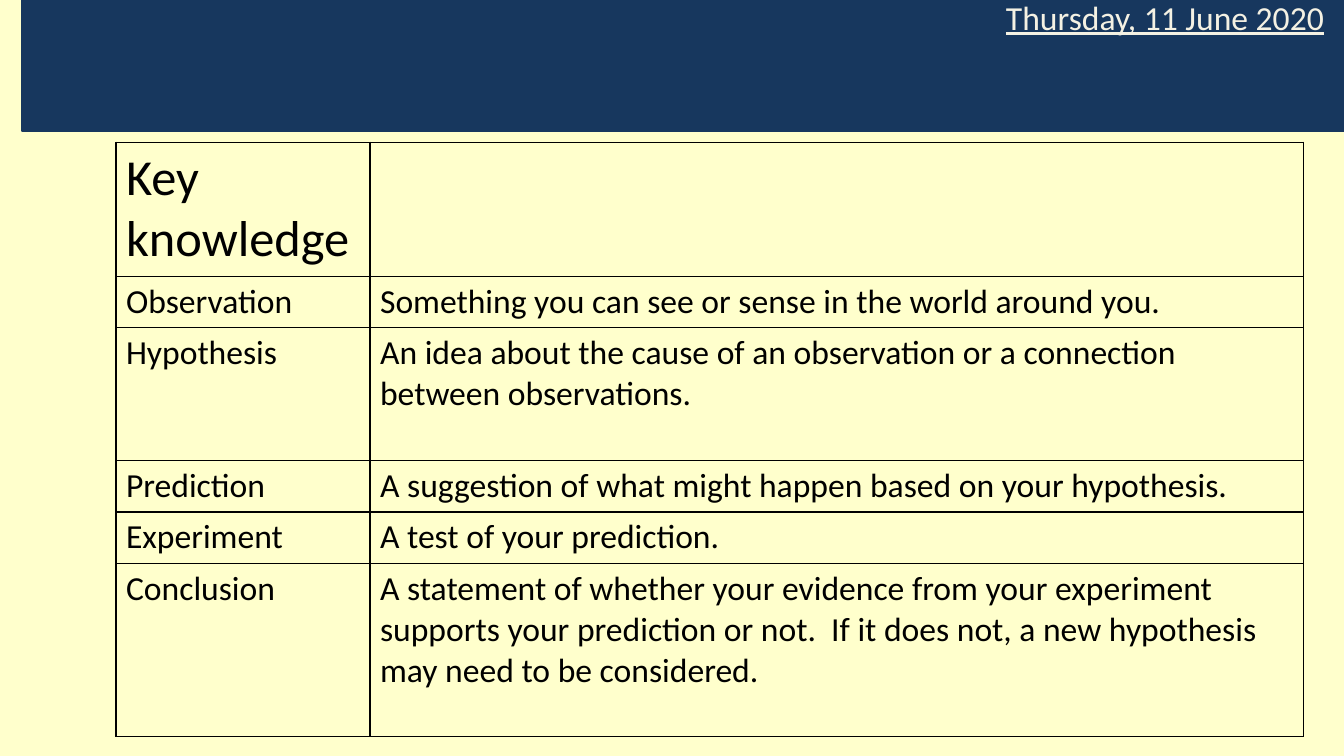
from lxml import etree
from pptx import Presentation
from pptx.dml.color import RGBColor as RGB
from pptx.enum.shapes import MSO_SHAPE as SHAPE
from pptx.enum.text import PP_ALIGN as ALIGN
from pptx.oxml.ns import qn
from pptx.util import Inches, Pt

COLORS = {
    "paper": "FFFFCC",
    "navy": "17375E",
    "cream": "F4F1E3",
    "black": "000000",
}
FONT = "Calibri"
COL_WIDTHS = (2.52, 9.26)
KEY_TERMS = [
    (1.33, 36, "Key knowledge", ""),
    (0.51, 24, "Observation",
     "Something you can see or sense in the world around you."),
    (1.32, 24, "Hypothesis",
     "An idea about the cause of an observation or a connection between "
     "observations."),
    (0.51, 24, "Prediction",
     "A suggestion of what might happen based on your hypothesis."),
    (0.51, 24, "Experiment", "A test of your prediction."),
    (1.72, 24, "Conclusion",
     "A statement of whether your evidence from your experiment supports "
     "your prediction or not.  If it does not, a new hypothesis may need "
     "to be considered."),
]


def color(name):
    return RGB.from_string(COLORS[name])


def write(tf, text, size, color_name):
    p = tf.paragraphs[0]
    p.text = text
    for r in p.runs:
        r.font.name = FONT
        r.font.size = Pt(size)
        r.font.color.rgb = color(color_name)
    return p


def add_banner(slide, left, top, width, height):
    sp = slide.shapes.add_shape(SHAPE.RECTANGLE, Inches(left), Inches(top),
                                Inches(width), Inches(height))
    sp.shadow.inherit = False
    sp.fill.solid()
    sp.fill.fore_color.rgb = color("navy")
    sp.line.color.rgb = color("navy")
    sp.line.width = Pt(1)

    date = slide.shapes.add_textbox(Inches(left + width - 6.35),
                                    Inches(top - 0.03),
                                    Inches(6.25), Inches(0.4))
    date.text_frame.word_wrap = True
    p = write(date.text_frame, "Thursday, 11 June 2020", 24, "cream")
    p.alignment = ALIGN.RIGHT
    p.runs[0].font.underline = True


def add_borders(cell):
    tc_pr = cell._tc.get_or_add_tcPr()
    for i, side in enumerate(("lnL", "lnR", "lnT", "lnB")):
        ln = etree.Element(qn(f"a:{side}"), w=str(Pt(1)))
        fill = etree.SubElement(ln, qn("a:solidFill"))
        etree.SubElement(fill, qn("a:srgbClr"), val=COLORS["black"])
        tc_pr.insert(i, ln)


def add_key_table(slide, left, top, width, height):
    frame = slide.shapes.add_table(len(KEY_TERMS), len(COL_WIDTHS),
                                   Inches(left), Inches(top),
                                   Inches(width), Inches(height))
    table = frame.table
    table.first_row = False
    table.horz_banding = False
    for col, share in zip(table.columns, COL_WIDTHS):
        col.width = Inches(width * share / sum(COL_WIDTHS))
    total = sum(term[0] for term in KEY_TERMS)
    for row, (share, size, *texts) in zip(table.rows, KEY_TERMS):
        row.height = Inches(height * share / total)
        for cell, text in zip(row.cells, texts):
            cell.fill.background()
            add_borders(cell)
            write(cell.text_frame, text, size, "black")


def main():
    prs = Presentation()
    prs.slide_width = Inches(13.33)
    prs.slide_height = Inches(7.5)
    slide = prs.slides.add_slide(prs.slide_layouts[6])
    slide.background.fill.solid()
    slide.background.fill.fore_color.rgb = color("paper")
    add_banner(slide, 0.22, -0.05, 13.11, 1.35)
    add_key_table(slide, 1.15, 1.41, 11.78, 5.9)
    prs.save("out.pptx")


if __name__ == "__main__":
    main()
